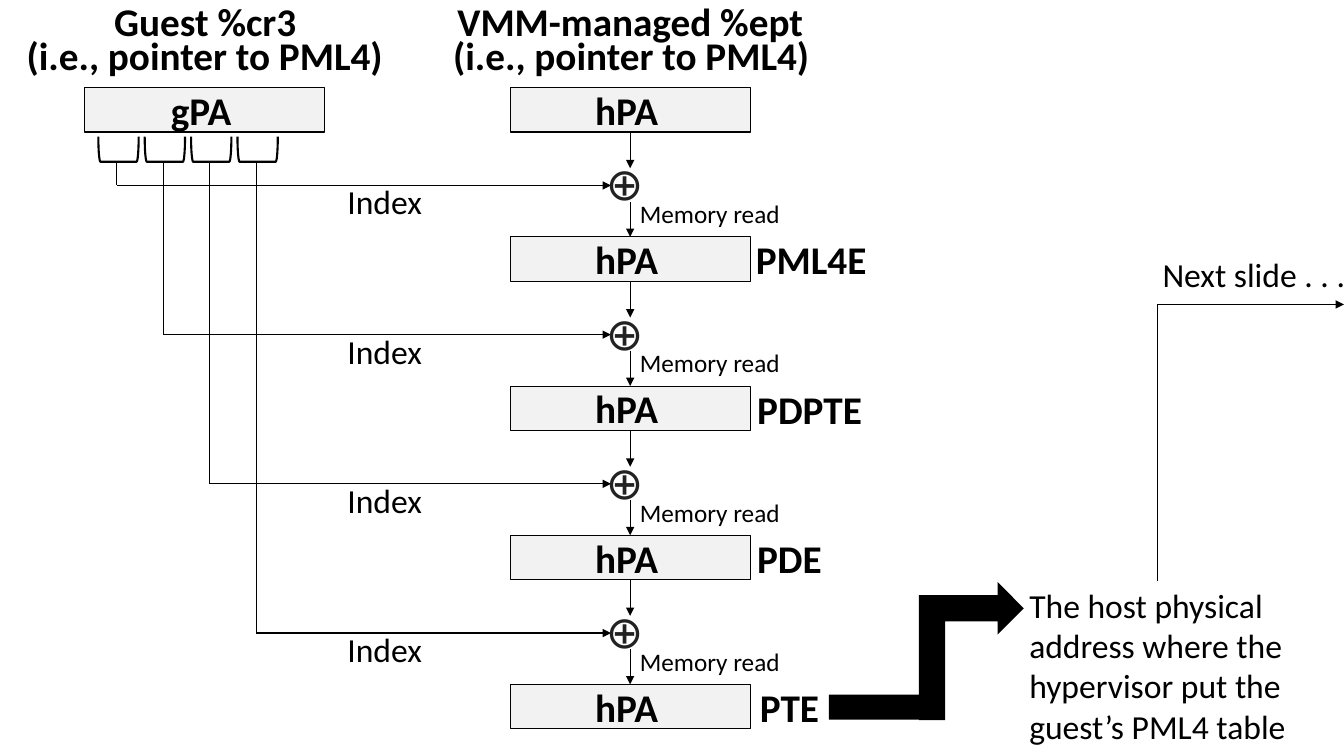
from lxml.etree import SubElement
from pptx import Presentation
from pptx.dml.color import RGBColor
from pptx.enum.shapes import MSO_CONNECTOR, MSO_SHAPE
from pptx.enum.text import MSO_ANCHOR, PP_ALIGN
from pptx.oxml.ns import qn
from pptx.util import Inches, Pt

BLACK = RGBColor(0x00, 0x00, 0x00)
CHARCOAL = RGBColor(0x22, 0x22, 0x22)
LIGHT_GRAY = RGBColor(0xF2, 0xF2, 0xF2)

deck = Presentation()
deck.slide_width = Inches(13.33)
deck.slide_height = Inches(7.5)
page = deck.slides.add_slide(deck.slide_layouts[6])


def write(shape, text, size, bold=False, align=PP_ALIGN.CENTER, font="Calibri", color=BLACK):
    frame = shape.text_frame
    frame.word_wrap = True
    para = frame.paragraphs[0]
    para.text = text
    para.alignment = align
    span = para.runs[0]
    span.font.name = font
    span.font.size = Pt(size)
    span.font.bold = bold
    span.font.color.rgb = color


def connect(x1, y1, x2, y2, arrow=True):
    line = page.shapes.add_connector(
        MSO_CONNECTOR.STRAIGHT, Inches(x1), Inches(y1), Inches(x2), Inches(y2))
    line.line.color.rgb = BLACK
    line.line.width = Pt(0.75)
    if arrow:
        SubElement(line.line._get_or_add_ln(), qn("a:tailEnd"), type="triangle")
    SubElement(line._element.spPr, qn("a:effectLst"))
    return line


row_pitch = 1.48
field_pitch = 0.46
first_top = 0.87
box_width = 2.38
box_height = 0.44
guest_left = 0.84
host_left = 5.06
host_middle = host_left + box_width / 2

address_boxes = []
places = [("gPA", guest_left, first_top)]
places += [("hPA", host_left, first_top + row * row_pitch) for row in range(5)]
for name, left, top in places:
    box = page.shapes.add_shape(
        MSO_SHAPE.RECTANGLE, Inches(left), Inches(top), Inches(box_width), Inches(box_height))
    box.shadow.inherit = False
    box.fill.solid()
    box.fill.fore_color.rgb = LIGHT_GRAY
    box.line.color.rgb = BLACK
    box.line.width = Pt(0.75)
    frame = box.text_frame
    frame.margin_left = frame.margin_top = frame.margin_bottom = 0
    frame.margin_right = Inches(0.07)
    frame.vertical_anchor = MSO_ANCHOR.MIDDLE
    write(box, name, 28, bold=True)
    address_boxes.append(box)
host_boxes = address_boxes[1:]

labels = [
    ("Guest %cr3", 0.81, -0.08, 2.45, 0.57, 28, True),
    ("(i.e., pointer to PML4)", 0.08, 0.26, 3.9, 0.57, 28, True),
    ("VMM-managed %ept", 4.3, -0.08, 3.9, 0.57, 28, True),
    ("(i.e., pointer to PML4)", 4.31, 0.26, 3.9, 0.57, 28, True),
    ("Next slide . . .", 11.39, 2.47, 2.09, 0.5, 24, False),
]
entries = [("PML4E", 1.57), ("PDPTE", 1.54), ("PDE", 1.14), ("PTE", 1.14)]
for row, (entry, width) in enumerate(entries):
    shift = row * row_pitch
    labels += [
        ("Index", 3.2, 1.75 + shift, 1.23, 0.5, 24, False),
        ("Memory read", 6.21, 1.92 + shift, 1.66, 0.4, 18, False),
        (entry, 7.26, 2.29 + shift, width, 0.57, 28, True),
    ]
for text, left, top, width, height, size, bold in labels:
    label = page.shapes.add_textbox(Inches(left), Inches(top), Inches(width), Inches(height))
    write(label, text, size, bold)

for row in range(4):
    shift = row * row_pitch
    field_x = 1.16 + row * field_pitch
    index_y = 1.84 + shift

    bracket = page.shapes.add_shape(
        MSO_SHAPE.RIGHT_BRACKET, Inches(1.05 + row * field_pitch), Inches(1.28),
        Inches(0.25), Inches(0.4))
    bracket.rotation = 90
    bracket.shadow.inherit = False
    bracket.fill.background()
    bracket.line.color.rgb = BLACK
    bracket.line.width = Pt(1.5)

    connect(field_x, 1.6, field_x, index_y, arrow=False)
    connect(field_x, index_y, 6.06, index_y)

    plus = page.shapes.add_textbox(Inches(5.91), Inches(1.5 + shift), Inches(0.65), Inches(0.64))
    write(plus, "⊕", 32, align=PP_ALIGN.LEFT, font="Roboto", color=CHARCOAL)

    add_arrow = connect(host_middle, 1.31 + shift, host_middle, 1.67 + shift)
    add_arrow.begin_connect(host_boxes[row], 2)
    read_arrow = connect(host_middle, 2 + shift, host_middle, 2.35 + shift)
    read_arrow.end_connect(host_boxes[row + 1], 0)

bent_arrow = page.shapes.add_shape(
    MSO_SHAPE.BENT_UP_ARROW, Inches(8.95), Inches(5.94), Inches(1.37), Inches(1.04))
bent_arrow.rotation = 90
bent_arrow._element.spPr.find(qn("a:xfrm")).set("flipH", "1")
arrow_tail = page.shapes.add_shape(
    MSO_SHAPE.RECTANGLE, Inches(8.22), Inches(6.89), Inches(0.9), Inches(0.25))
for part in (bent_arrow, arrow_tail):
    part.shadow.inherit = False
    part.fill.solid()
    part.fill.fore_color.rgb = BLACK
    part.line.fill.background()

result = page.shapes.add_textbox(Inches(10.11), Inches(5.75), Inches(2.89), Inches(1.72))
write(result, "The host physical address where the hypervisor put the guest’s PML4 table",
      24, align=PP_ALIGN.LEFT)
connect(11.48, 5.76, 11.48, 3.02, arrow=False)
connect(11.48, 3.02, 13.33, 3.02)

deck.save("out.pptx")
